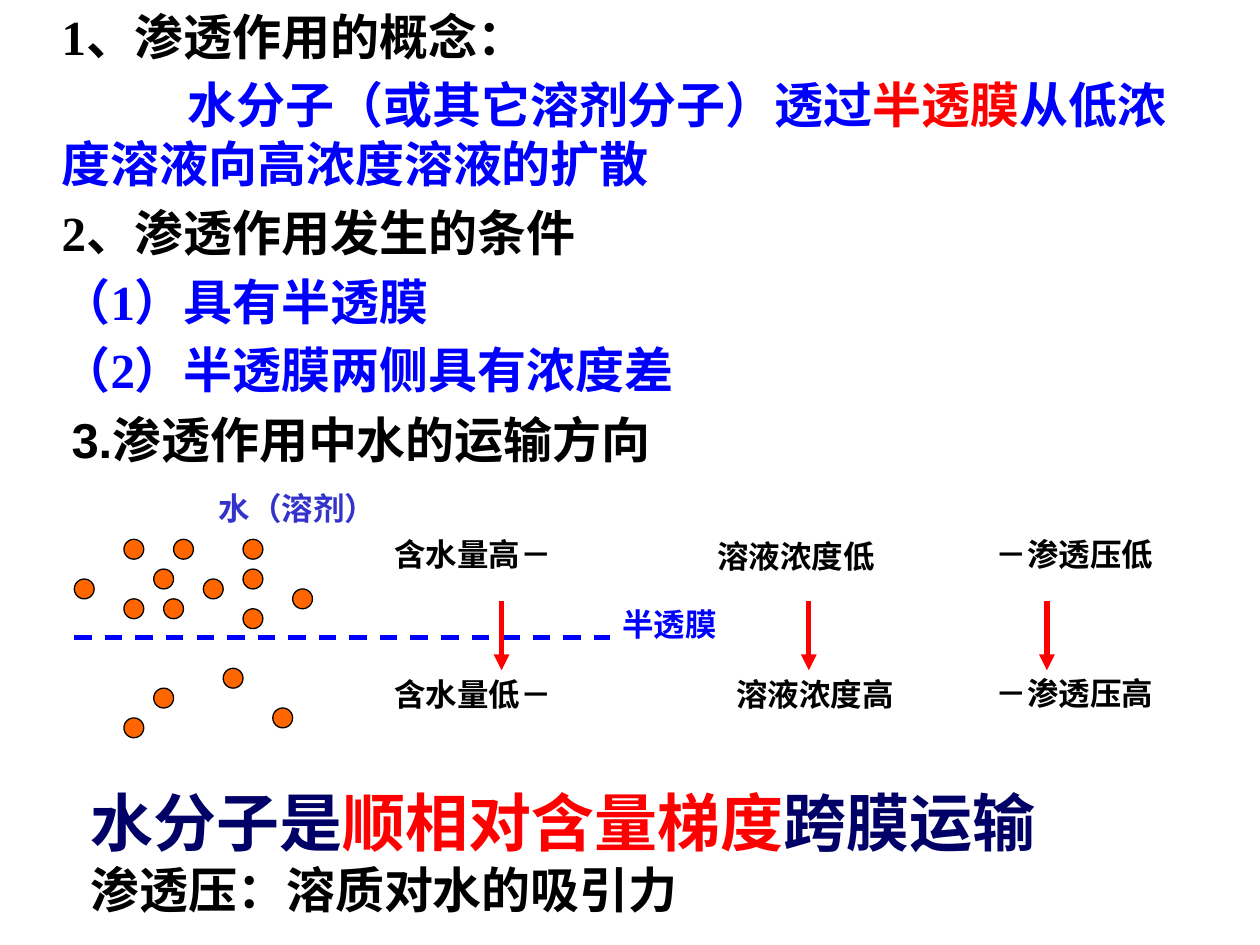
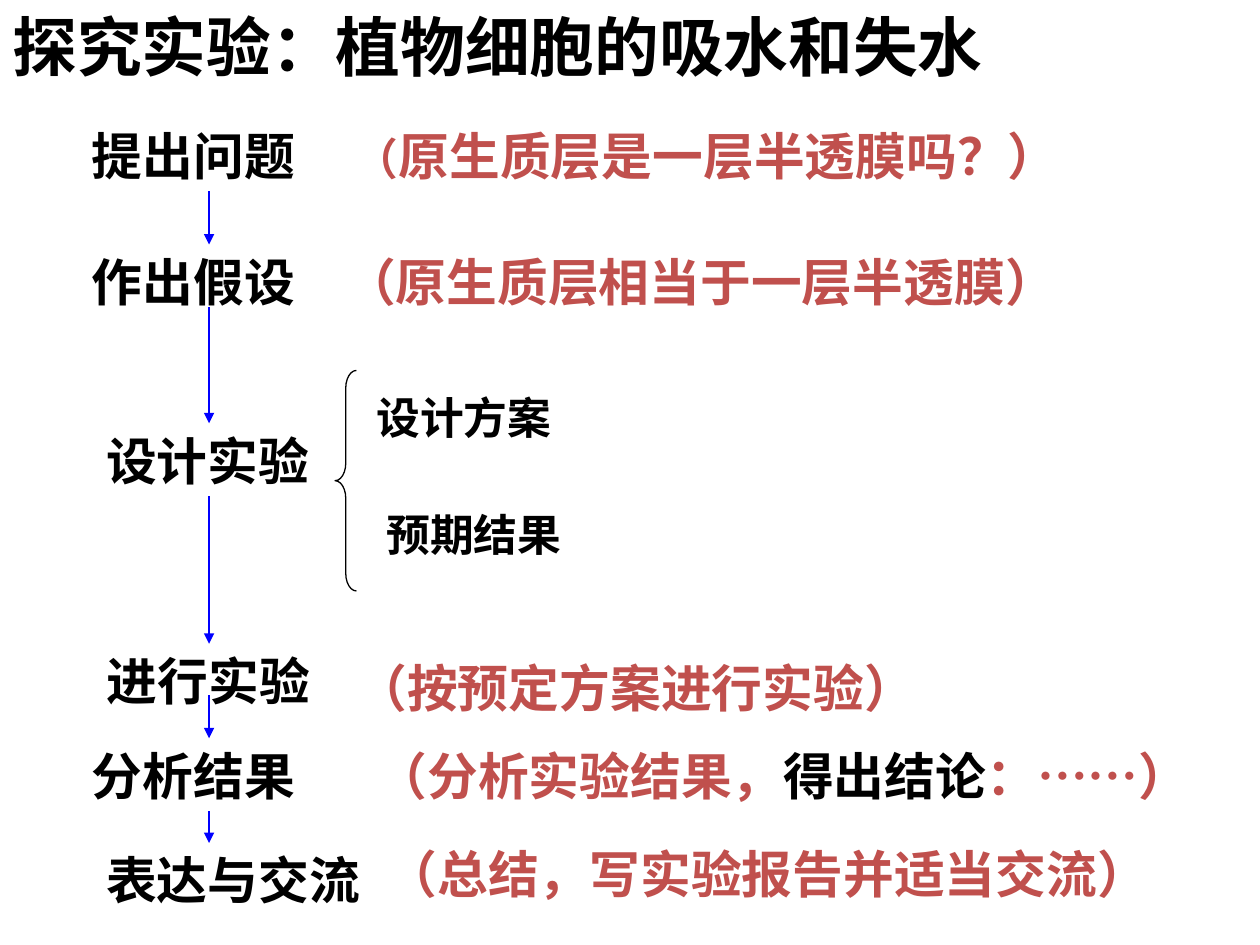
"""Build two slides on osmosis and the plant cell water experiment."""
from dataclasses import dataclass
from typing import Optional

from lxml import etree
from pptx import Presentation
from pptx.dml.color import RGBColor
from pptx.enum import dml, shapes, text
from pptx.oxml import ns
from pptx.util import Pt

BLACK = RGBColor(0x00, 0x00, 0x00)
WHITE = RGBColor(0xFF, 0xFF, 0xFF)
BLUE = RGBColor(0x00, 0x00, 0xFF)
RED = RGBColor(0xFF, 0x00, 0x00)
NAVY = RGBColor(0x00, 0x00, 0x66)
INDIGO = RGBColor(0x33, 0x33, 0xCC)
ORANGE = RGBColor(0xFF, 0x66, 0x00)
BRICK = RGBColor(0xC0, 0x50, 0x4D)
SERIF, SANS, SMALL, CJK = "Times New Roman", "Arial", "Calibri", "Noto Sans CJK SC"
LEFT, RIGHT = text.PP_ALIGN.LEFT, text.PP_ALIGN.RIGHT


@dataclass(frozen=True)
class Run:
    words: str
    size: float
    color: RGBColor = BLACK
    font: str = SERIF


@dataclass(frozen=True)
class Label:
    left: float
    top: float
    width: float
    height: float
    paragraphs: tuple[tuple[Run, ...], ...]
    align: text.PP_ALIGN = LEFT
    fill: Optional[RGBColor] = None


@dataclass(frozen=True)
class Line:
    start: tuple[float, float]
    end: tuple[float, float]
    color: RGBColor
    width: float
    dashed: bool = False


def small(words: str, color: RGBColor = BLACK) -> tuple[tuple[Run, ...], ...]:
    """Return one 18-point diagram paragraph."""
    return ((Run(words, 18, color, SMALL),),)


def write(frame, paragraphs: tuple[tuple[Run, ...], ...], align=LEFT) -> None:
    """Fill a text frame run by run in bold."""
    frame.word_wrap = True
    frame.auto_size = text.MSO_AUTO_SIZE.NONE
    frame.vertical_anchor = text.MSO_ANCHOR.TOP
    for index, runs in enumerate(paragraphs):
        paragraph = frame.add_paragraph() if index else frame.paragraphs[0]
        paragraph.alignment = align
        for part in runs:
            run = paragraph.add_run()
            run.text = part.words
            run.font.size = Pt(part.size)
            run.font.name = part.font
            run.font.bold = True
            run.font.color.rgb = part.color


def place(shape, left: float, top: float, width: float, height: float) -> None:
    """Move and size a placeholder."""
    shape.left, shape.top = Pt(left), Pt(top)
    shape.width, shape.height = Pt(width), Pt(height)


def draw_label(slide, label: Label) -> None:
    """Draw a text box with an optional fill."""
    box = slide.shapes.add_textbox(
        Pt(label.left), Pt(label.top), Pt(label.width), Pt(label.height))
    if label.fill is not None:
        box.fill.solid()
        box.fill.fore_color.rgb = label.fill
    write(box.text_frame, label.paragraphs, label.align)


def draw_line(slide, line: Line) -> None:
    """Draw a dashed line or a solid arrow."""
    connector = slide.shapes.add_connector(
        shapes.MSO_CONNECTOR.STRAIGHT, *map(Pt, line.start + line.end))
    connector.line.color.rgb = line.color
    connector.line.width = Pt(line.width)
    if line.dashed:
        connector.line.dash_style = dml.MSO_LINE.DASH
    else:
        etree.SubElement(connector.line._get_or_add_ln(),
                         ns.qn("a:tailEnd"), type="triangle")
    etree.SubElement(connector._element.spPr, ns.qn("a:effectLst"))


def draw_outlined(slide, kind, left: float, top: float, width: float, height: float,
                  fill: Optional[RGBColor] = None):
    """Draw a preset shape with a thin black outline."""
    shape = slide.shapes.add_shape(kind, Pt(left), Pt(top), Pt(width), Pt(height))
    shape.shadow.inherit = False
    if fill is None:
        shape.fill.background()
    else:
        shape.fill.solid()
        shape.fill.fore_color.rgb = fill
    shape.line.color.rgb = BLACK
    shape.line.width = Pt(0.75)
    return shape


CONCEPT = (
    (Run("1、渗透作用的概念：", 28),),
    (Run("水分子（或其它溶剂分子）透过", 28, BLUE), Run("半透膜", 28, RED),
     Run("从低浓度溶液向高浓度溶液的扩散", 28, BLUE)),
    (Run("2、渗透作用发生的条件", 28),),
    (Run("（1）具有半透膜", 28, BLUE),),
    (Run("（2）半透膜两侧具有浓度差", 28, BLUE),),
)
DEFINITION_INDEX = 1
OSMOSIS_LABELS = (
    Label(33.8, 230.4, 612.7, 41,
          ((Run("3.", 28, font=SANS), Run("渗透作用中水的运输方向", 28)),)),
    Label(348.5, 342, 138, 36, small("半透膜", BLUE)),
    Label(118, 275.8, 136, 36, small("水（溶剂）", INDIGO)),
    Label(218.2, 302.4, 150, 36, small("含水量高－")),
    Label(371.5, 303.1, 135.4, 36, small("溶液浓度低"), RIGHT),
    Label(530, 302.4, 136, 36, small("－渗透压低"), RIGHT),
    Label(218.2, 382.3, 150, 36, small("含水量低－")),
    Label(371.5, 382.3, 146.2, 36, small("溶液浓度高"), RIGHT),
    Label(530, 381.6, 136, 36, small("－渗透压高"), RIGHT),
    Label(44.6, 444.2, 579.6, 94, (
        (Run("水分子是", 36, NAVY), Run("顺相对含量梯度", 36, RED),
         Run("跨膜运输", 36, NAVY)),
        (Run("渗透压：溶质对水的吸引力", 28),))),
)
MEMBRANE = Line((42.5, 364.3), (348.5, 364.3), BLUE, 2.5, dashed=True)
GRADIENT_XS = (286.6, 462.2, 598.3)
MOLECULE_LEFT, MOLECULE_TOP, MOLECULE_STEP = 42.5, 308.2, 5.67
MOLECULES = (
    (17, 7), (22, 5), (9, 6), (5, 6), (17, 0), (13, 4), (17, 3), (5, 0),
    (0, 4), (10, 0), (8, 3), (8, 15), (5, 18), (15, 13), (20, 17),
)


def build_osmosis(deck) -> None:
    """Build the slide on the concept and direction of osmosis."""
    slide = deck.slides.add_slide(deck.slide_layouts[1])
    heading, concept = slide.placeholders
    heading._element.getparent().remove(heading._element)
    place(concept, 28, 0, 648, 356.4)
    write(concept.text_frame, CONCEPT)
    for index, paragraph in enumerate(concept.text_frame.paragraphs):
        properties = paragraph._p.get_or_add_pPr()
        properties.set("marL", "0")
        properties.set("indent", str(Pt(72 if index == DEFINITION_INDEX else 0)))
        etree.SubElement(properties, ns.qn("a:buNone"))
    draw_line(slide, MEMBRANE)
    for column, row in MOLECULES:
        draw_outlined(slide, shapes.MSO_SHAPE.OVAL,
                      MOLECULE_LEFT + column * MOLECULE_STEP,
                      MOLECULE_TOP + row * MOLECULE_STEP,
                      2 * MOLECULE_STEP, 2 * MOLECULE_STEP, ORANGE)
    for label in OSMOSIS_LABELS:
        draw_label(slide, label)
    for x in GRADIENT_XS:
        draw_line(slide, Line((x, 343.4), (x, 383), RED, 3))


def experiment_label(left: float, top: float, width: float, *runs: Run) -> Label:
    """Return a white one-line label of the experiment."""
    return Label(left, top, width, 42.5 if runs[-1].size > 25 else 38.2,
                 (runs,), fill=WHITE)


def answer(words: str, size: float = 29, font: str = SERIF) -> Run:
    """Return a run in the answer colour."""
    return Run(words, size, BRICK, font)


STEPS = tuple(experiment_label(left, top, width, Run(words, 29))
              for left, top, width, words in (
    (45.4, 67.7, 153.4, "提出问题"),
    (45.4, 139.7, 150.5, "作出假设"),
    (53.6, 241.9, 131.8, "设计实验"),
    (54, 367.9, 141.1, "进行实验"),
    (45.4, 421.9, 138.2, "分析结果"),
    (53.6, 481.7, 174.2, "表达与交流"),
))
ARROW_X = 119.5
ARROW_STARTS = (109.4, 175.7, 283.7, 397.4, 463.7)
ANSWERS = (
    experiment_label(195.8, 67.7, 419.8, answer("（", 25),
                     answer("原生质层是一层半透膜吗？）")),
    experiment_label(190.1, 139.7, 452.2, answer("（原生质层相当于一层半透膜）")),
    experiment_label(208.1, 219.6, 181.4, Run("设计方案", 25)),
    experiment_label(213.8, 286.6, 198, Run("预期结果", 25)),
    experiment_label(196.6, 371.5, 355.7, answer("（按预定方案进行实验）")),
    experiment_label(208.1, 421.9, 504, answer("（分析实验结果，"), Run("得出结论", 29),
                     answer("："), answer("……", font=CJK), answer("）")),
    experiment_label(213.8, 478.1, 459.4, answer("（总结，写实验报告并适当交流）")),
)


def build_experiment(deck) -> None:
    """Build the slide on the steps of the experiment."""
    slide = deck.slides.add_slide(deck.slide_layouts[5])
    place(slide.shapes.title, 0, 0, 642.2, 52.6)
    write(slide.shapes.title.text_frame,
          ((Run("探究实验：植物细胞的吸水和失水", 37, font=CJK),),))
    for label in STEPS + ANSWERS:
        draw_label(slide, label)
    for start, following in zip(ARROW_STARTS, STEPS[1:]):
        draw_line(slide, Line((ARROW_X, start), (ARROW_X, following.top), BLUE, 0.75))
    brace = draw_outlined(slide, shapes.MSO_SHAPE.LEFT_BRACE, 191.5, 211.7, 12.2, 126)
    brace.adjustments[0] = 0.82


def main() -> None:
    """Create and save the deck."""
    deck = Presentation()
    deck.slide_width, deck.slide_height = Pt(720), Pt(540)
    build_osmosis(deck)
    build_experiment(deck)
    deck.save("out.pptx")


if __name__ == "__main__":
    main()
